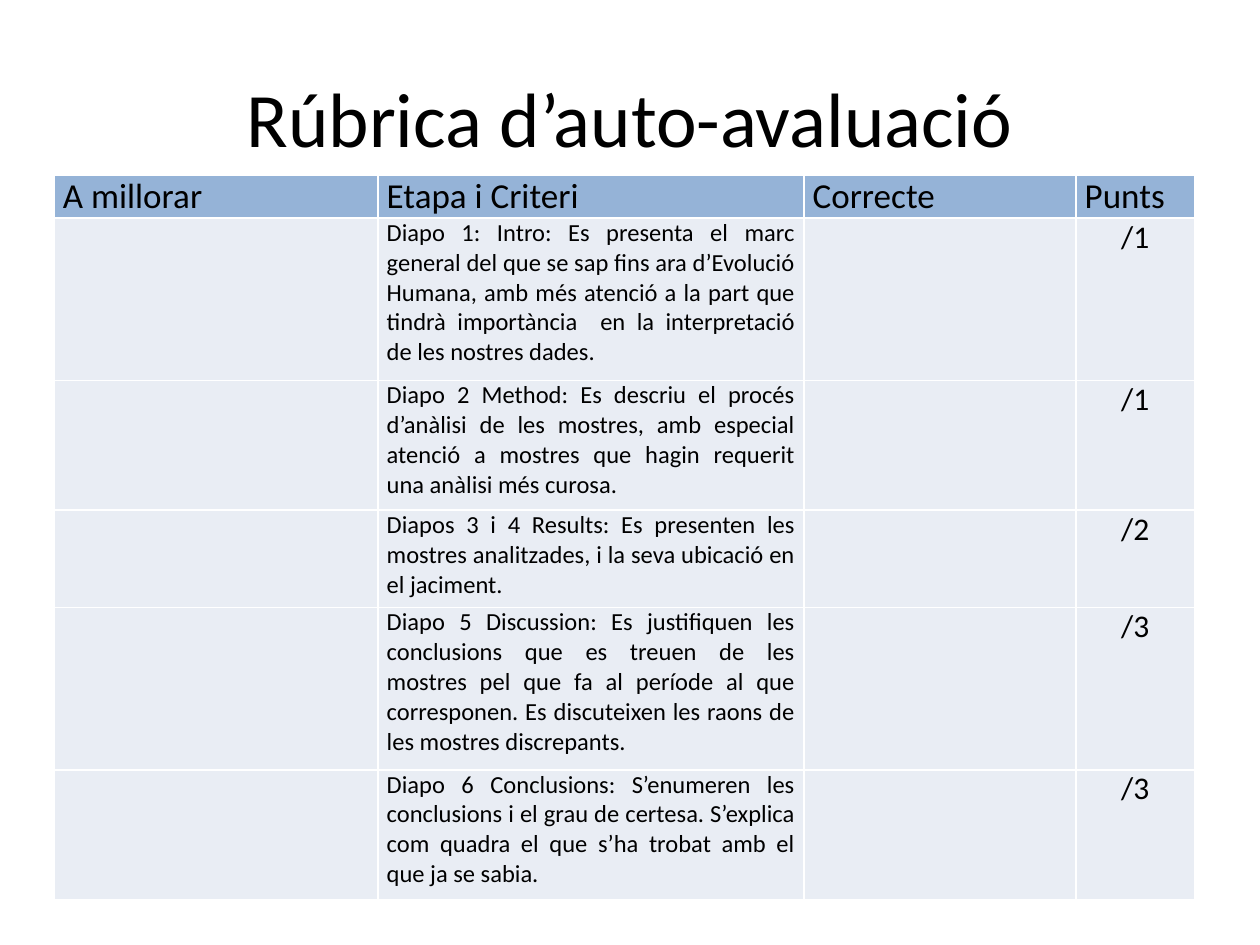
from dataclasses import dataclass

from lxml import etree
from pptx import Presentation
from pptx import util as u
from pptx.dml.color import RGBColor
from pptx.enum import text
from pptx.oxml.ns import qn


@dataclass(frozen=True)
class Theme:
    font: str = "Calibri"
    ink: str = "000000"
    header_fill: str = "95B3D7"
    body_fill: str = "E9EDF4"
    rule: str = "FFFFFF"
    rule_width: float = 1
    title_size: int = 44
    header_size: int = 20
    criterion_size: int = 14
    points_size: int = 18


@dataclass(frozen=True)
class Criterion:
    description: str
    points: str
    lines: int


THEME = Theme()
ALIGN = text.PP_ALIGN
SLIDE_WIDTH, SLIDE_HEIGHT = 10, 7.5
TABLE_LEFT, TABLE_TOP = 0.43, 1.39
HEADER_HEIGHT, BODY_HEIGHT = 0.33, 5.41
COLUMNS = {"A millorar": 2.57, "Etapa i Criteri": 3.38, "Correcte": 2.16, "Punts": 0.94}
CRITERION_COLUMN, POINTS_COLUMN = 1, 3

CRITERIA = [
    Criterion("Diapo 1: Intro: Es presenta el marc general del que se sap fins ara "
              "d’Evolució Humana, amb més atenció a la part que tindrà importància  en la "
              "interpretació de les nostres dades.", "/1", 5),
    Criterion("Diapo 2 Method: Es descriu el procés d’anàlisi de les mostres, amb especial "
              "atenció a mostres que hagin requerit una anàlisi més curosa.", "/1", 4),
    Criterion("Diapos 3 i 4 Results: Es presenten les mostres analitzades, i la seva "
              "ubicació en el jaciment.", "/2", 3),
    Criterion("Diapo 5 Discussion: Es justifiquen les conclusions que es treuen de les "
              "mostres pel que fa al període al que corresponen. Es discuteixen les raons "
              "de les mostres discrepants.", "/3", 5),
    Criterion("Diapo 6 Conclusions: S’enumeren les conclusions i el grau de certesa. "
              "S’explica com quadra el que s’ha trobat amb el que ja se sabia.", "/3", 4),
]


def add_run(paragraph, words: str, size: int, align) -> None:
    paragraph.alignment = align
    run = paragraph.add_run()
    run.text = words
    run.font.name = THEME.font
    run.font.size = u.Pt(size)
    run.font.bold = False
    run.font.color.rgb = RGBColor.from_string(THEME.ink)


def style_cell(cell, fill: str) -> None:
    """Rule all four sides, then fill: the schema wants the borders first."""
    properties = cell._tc.get_or_add_tcPr()
    for side in ("a:lnL", "a:lnR", "a:lnT", "a:lnB"):
        line = etree.SubElement(properties, qn(side), w=str(u.Pt(THEME.rule_width)))
        paint = etree.SubElement(line, qn("a:solidFill"))
        etree.SubElement(paint, qn("a:srgbClr"), val=THEME.rule)
    cell.fill.solid()
    cell.fill.fore_color.rgb = RGBColor.from_string(fill)


def write_cell(cell, words: str, size: int, align) -> None:
    cell.margin_left = cell.margin_right = u.Inches(0.07)
    cell.margin_top = cell.margin_bottom = 0
    paragraph = cell.text_frame.paragraphs[0]
    paragraph.space_after = u.Pt(6)
    add_run(paragraph, words, size, align)


def add_title(slide, words: str) -> None:
    title = slide.shapes.title
    title.left, title.top = u.Inches(0.5), u.Inches(0.3)
    title.width, title.height = u.Inches(SLIDE_WIDTH - 1), u.Inches(1.25)
    title.text_frame.vertical_anchor = text.MSO_ANCHOR.MIDDLE
    add_run(title.text_frame.paragraphs[0], words, THEME.title_size, ALIGN.CENTER)


def add_rubric(slide) -> None:
    table = slide.shapes.add_table(
        len(CRITERIA) + 1, len(COLUMNS), u.Inches(TABLE_LEFT), u.Inches(TABLE_TOP),
        u.Inches(sum(COLUMNS.values())), u.Inches(HEADER_HEIGHT + BODY_HEIGHT)).table
    table.first_row = table.horz_banding = False

    table.rows[0].height = u.Inches(HEADER_HEIGHT)
    for index, (heading, width) in enumerate(COLUMNS.items()):
        table.columns[index].width = u.Inches(width)
        style_cell(table.cell(0, index), THEME.header_fill)
        write_cell(table.cell(0, index), heading, THEME.header_size, ALIGN.JUSTIFY)

    line_height = BODY_HEIGHT / sum(criterion.lines for criterion in CRITERIA)
    for row, criterion in enumerate(CRITERIA, start=1):
        table.rows[row].height = u.Inches(criterion.lines * line_height)
        for column in range(len(COLUMNS)):
            style_cell(table.cell(row, column), THEME.body_fill)
        write_cell(table.cell(row, CRITERION_COLUMN), criterion.description,
                   THEME.criterion_size, ALIGN.JUSTIFY)
        write_cell(table.cell(row, POINTS_COLUMN), criterion.points,
                   THEME.points_size, ALIGN.CENTER)


def main() -> None:
    deck = Presentation()
    deck.slide_width, deck.slide_height = u.Inches(SLIDE_WIDTH), u.Inches(SLIDE_HEIGHT)
    slide = deck.slides.add_slide(deck.slide_layouts.get_by_name("Title Only"))
    add_title(slide, "Rúbrica d’auto-avaluació")
    add_rubric(slide)
    deck.save("out.pptx")


if __name__ == "__main__":
    main()
